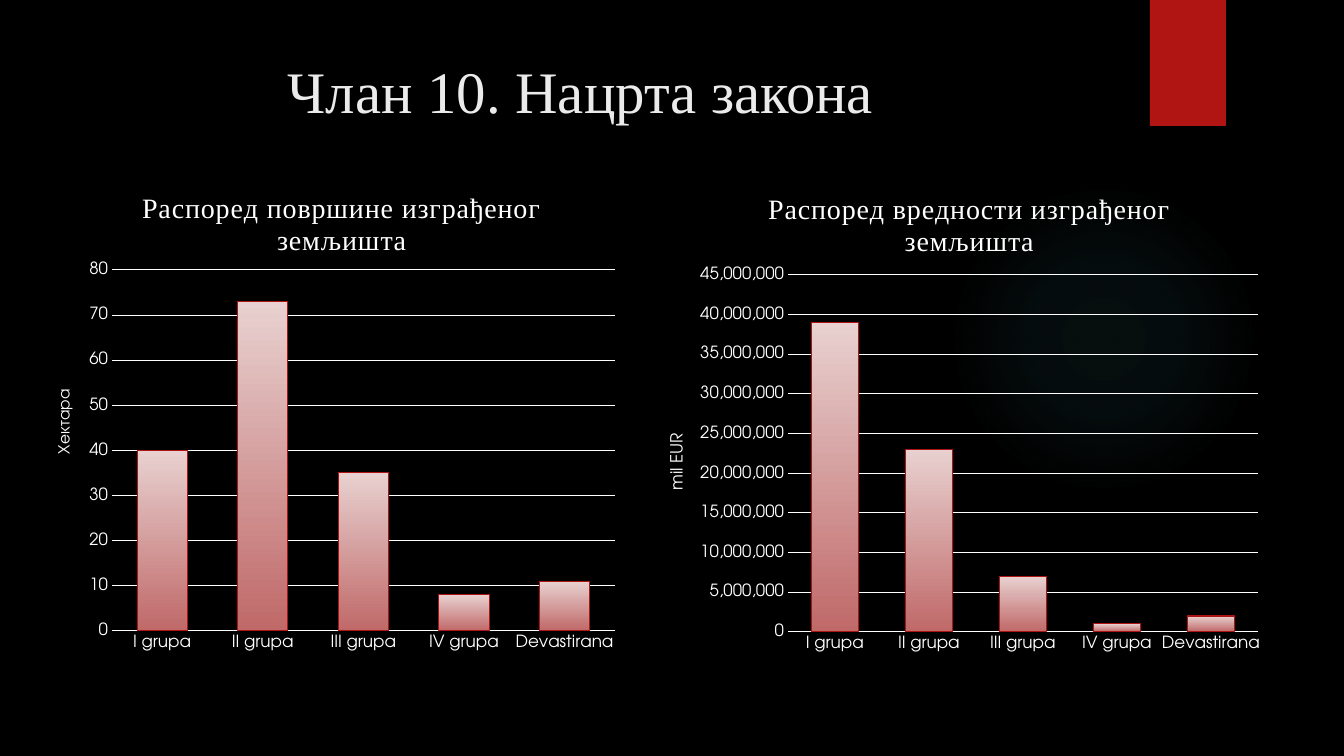
from lxml import etree
from pptx import Presentation
from pptx.chart.data import CategoryChartData
from pptx.dml.color import RGBColor
from pptx.enum.chart import XL_CHART_TYPE as ChartType, XL_TICK_MARK as TickMark
from pptx.enum.shapes import MSO_SHAPE as Preset
from pptx.enum.text import MSO_ANCHOR as Anchor, MSO_AUTO_SIZE as AutoSize, PP_ALIGN as Align
from pptx.oxml import parse_xml
from pptx.oxml.ns import nsdecls, qn
from pptx.util import Pt

PX = 9144000 / 1008
COLORS = {
    "background": "000000", "accent": "B01513", "glow": "50B9C1",
    "title": "EBEBEB", "text": "FFFFFF", "bar_top": "E8D1D0",
    "bar_bottom": "C06969", "bar_line": "AC1513",
}
SERIF, SANS = "Times New Roman", "TeX Gyre Adventor"
GROUPS = ["I grupa", "II grupa", "III grupa", "IV grupa", "Devastirana"]


def set_font(font, name, size, color="text"):
    values = {"name": name, "size": Pt(size), "bold": False}
    for attribute, value in values.items():
        setattr(font, attribute, value)
    font.color.rgb = RGBColor.from_string(COLORS[color])


def place(element, chart_box, box, inner=False):
    """Put a chart part at slide pixels; titles take only left and top."""
    for old in element.findall(qn("c:layout")):
        element.remove(old)
    left, top, width, height = chart_box
    fractions = [(box[0] - left) / width, (box[1] - top) / height]
    fractions += [size / total for size, total in zip(box[2:], (width, height))]
    layout = parse_xml(f'<c:layout {nsdecls("c")}><c:manualLayout/></c:layout>')
    manual = layout[0]
    tags = [("layoutTarget", "inner")] if inner else []
    tags += [("xMode", "edge"), ("yMode", "edge")]
    tags += [(tag, f"{value:.4f}") for tag, value in zip("xywh", fractions)]
    for tag, value in tags:
        etree.SubElement(manual, qn(f"c:{tag}")).set("val", value)
    text = element.find(qn("c:tx"))
    element.insert(0 if text is None else 1, layout)


presentation = Presentation()
presentation.slide_width, presentation.slide_height = round(1344 * PX), round(756 * PX)
slide = presentation.slides.add_slide(presentation.slide_layouts[5])
slide.background.fill.solid()
slide.background.fill.fore_color.rgb = RGBColor.from_string(COLORS["background"])

# Background glow and red tab
for preset, box in [(Preset.OVAL, (949, 184, 310, 310)), (Preset.RECTANGLE, (1150, 0, 76, 126))]:
    shape = slide.shapes.add_shape(preset, *[round(value * PX) for value in box])
    shape.shadow.inherit = False
    shape.line.fill.background()
    shape.fill.solid()
    shape.fill.fore_color.rgb = RGBColor.from_string(COLORS["accent"])
    if preset == Preset.OVAL:
        stops = "".join(
            f'<a:gs pos="{position}000"><a:srgbClr val="{COLORS["glow"]}">'
            f'<a:alpha val="{alpha}000"/></a:srgbClr></a:gs>'
            for position, alpha in [(0, 7), (36, 6), (69, 0), (100, 0)])
        solid = shape.element.spPr.find(qn("a:solidFill"))
        shape.element.spPr.replace(solid, parse_xml(
            f'<a:gradFill {nsdecls("a")}><a:gsLst>{stops}</a:gsLst><a:path path="circle">'
            '<a:fillToRect l="50000" t="50000" r="50000" b="50000"/></a:path></a:gradFill>'))

# Slide title
title = slide.shapes.title
title_box = {"left": 72, "top": 50, "width": 1037, "height": 154}
for attribute, value in title_box.items():
    setattr(title, attribute, round(value * PX))
frame = title.text_frame
frame_format = {"word_wrap": True, "auto_size": AutoSize.NONE,
                "vertical_anchor": Anchor.TOP, "margin_right": round(30 * PX)}
for attribute, value in frame_format.items():
    setattr(frame, attribute, value)
frame.text = "Члан 10. Нацрта закона"
frame.paragraphs[0].alignment = Align.CENTER
set_font(frame.paragraphs[0].runs[0].font, SERIF, 42, "title")

# Column charts
charts = [
    {"box": (34, 164, 593, 496), "plot": (112, 270, 503, 361),
     "title": "Распоред површине изграђеног земљишта", "title_at": (137, 185),
     "unit": "Хектара", "unit_at": (52, 386),
     "maximum": 80, "step": 10, "values": [40, 73, 35, 8, 11]},
    {"box": (644, 169, 629, 492), "plot": (788, 275, 470, 357),
     "title": "Распоред вредности изграђеног земљишта", "title_at": (763, 186),
     "unit": "mil EUR", "unit_at": (665, 430),
     "maximum": 45000000, "step": 5000000,
     "values": [39000000, 23000000, 7000000, 1000000, 2000000]},
]
for item in charts:
    data = CategoryChartData(number_format="#,##0")
    data.categories = GROUPS
    data.add_series("Series 1", item["values"])
    chart = slide.shapes.add_chart(
        ChartType.COLUMN_CLUSTERED, *[round(value * PX) for value in item["box"]], data).chart
    set_font(chart.font, SANS, 10)
    chart.has_legend = False
    chart.has_title = True
    place(chart.element.chart.plotArea, item["box"], item["plot"], inner=True)

    # Axes
    category_axis, value_axis = chart.category_axis, chart.value_axis
    for axis in (category_axis, value_axis):
        axis.major_tick_mark = axis.minor_tick_mark = TickMark.NONE
        set_font(axis.tick_labels.font, SANS, 12)
    value_axis.minimum_scale, value_axis.maximum_scale = 0, item["maximum"]
    value_axis.major_unit = item["step"]
    value_axis.has_major_gridlines = True
    value_axis.tick_labels.number_format = "#,##0"
    value_axis.tick_labels.number_format_is_linked = False
    value_axis.format.line.fill.background()

    # Chart title and unit
    value_axis.has_title = True
    titles = [(chart.chart_title, "title", SERIF, 20), (value_axis.axis_title, "unit", SANS, 12)]
    for heading, key, font_name, size in titles:
        heading_frame = heading.text_frame
        heading_frame.text = item[key]
        run = heading_frame.paragraphs[0].runs[0]
        set_font(run.font, font_name, size)
        if key == "title":
            run.font._element.set("spc", "50")
        else:
            heading_frame._txBody.bodyPr.set("rot", "-5400000")
        place(heading._element, item["box"], item[f"{key}_at"])

    # Bars
    plot = chart.plots[0]
    plot.vary_by_categories = False
    plot.gap_width, plot.overlap = 100, -24
    bars = plot.series[0].format
    bars.fill.gradient()
    bars.fill.gradient_angle = 270
    for stop, color in zip(bars.fill.gradient_stops, ("bar_top", "bar_bottom")):
        stop.color.rgb = RGBColor.from_string(COLORS[color])

    lines = [(category_axis.format.line, "text"),
             (value_axis.major_gridlines.format.line, "text"), (bars.line, "bar_line")]
    for line, color in lines:
        line.color.rgb = RGBColor.from_string(COLORS[color])
        line.width = Pt(0.75)

presentation.save("out.pptx")
